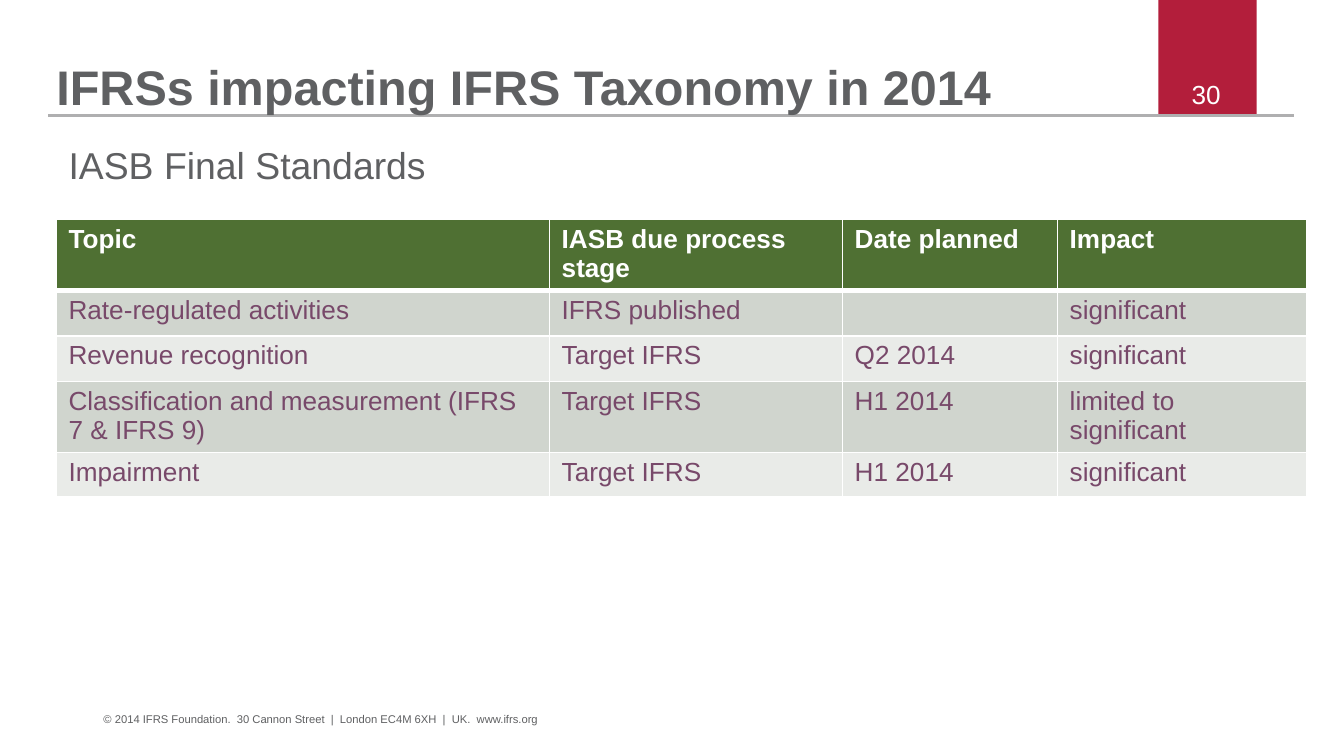
from dataclasses import dataclass
from typing import NamedTuple

from lxml.etree import SubElement
from pptx import Presentation
from pptx.dml.color import RGBColor
from pptx.enum.shapes import MSO_CONNECTOR, MSO_SHAPE
from pptx.enum.text import MSO_ANCHOR, PP_ALIGN
from pptx.oxml.ns import qn
from pptx.util import Emu, Inches, Pt


@dataclass(frozen=True)
class Theme:
    font: str = "Arial"
    grey: str = "5F6062"
    rule: str = "AFAFB0"
    red: str = "B31E3B"
    white: str = "FFFFFF"
    green: str = "4F7033"
    plum: str = "78496A"
    bands: tuple[str, str] = ("D0D5CE", "E9EBE8")
    title: float = 26
    subtitle: float = 20
    body: float = 14
    footer: float = 6


class Box(NamedTuple):
    """Left, top, width and height in percent of the slide's size."""
    x: float
    y: float
    w: float
    h: float


@dataclass(frozen=True)
class Label:
    text: str
    box: Box
    size: float
    color: str
    bold: bool = False
    align: PP_ALIGN = PP_ALIGN.LEFT
    anchor: MSO_ANCHOR = MSO_ANCHOR.TOP
    inset: tuple[float, float] = (0, 0)
    spacing: float = 1.0


T = Theme()
# Widescreen, 16:9
WIDTH = Inches(10)
HEIGHT = Emu(WIDTH * 9 // 16)
MARGIN, CONTENT = 4.2, 93
INSET = (0.09, 0.04)

LABELS = [
    Label("IFRSs impacting IFRS Taxonomy in 2014", Box(MARGIN, 3.73, 84, 11.56),
          T.title, T.grey, bold=True, anchor=MSO_ANCHOR.BOTTOM, spacing=0.9),
    Label("© 2014 IFRS Foundation.  30 Cannon Street  |  London EC4M 6XH  |  UK.  www.ifrs.org",
          Box(7.7, 94.22, 61.8, 2.84), T.footer, T.grey),
    Label("30", Box(86.3, 10.31, 6.9, 2.84), T.body, T.white, align=PP_ALIGN.CENTER),
    Label("IASB Final Standards", Box(MARGIN, 18.13, CONTENT, 7.47),
          T.subtitle, T.grey, inset=INSET),
]

COLUMNS = [36.7, 21.8, 16, 18.5]
ROWS = [9.42, 6.04, 6.04, 9.42, 5.87]
CELLS = [
    ["Topic", "IASB due process stage", "Date planned", "Impact"],
    ["Rate-regulated activities", "IFRS published", "", "significant"],
    ["Revenue recognition", "Target IFRS", "Q2 2014", "significant"],
    ["Classification and measurement (IFRS 7 & IFRS 9)", "Target IFRS", "H1 2014",
     "limited to significant"],
    ["Impairment", "Target IFRS", "H1 2014", "significant"],
]


def across(percent: float) -> Emu:
    return Emu(round(WIDTH * percent / 100))


def down(percent: float) -> Emu:
    return Emu(round(HEIGHT * percent / 100))


def place(box: Box) -> tuple[Emu, Emu, Emu, Emu]:
    return across(box.x), down(box.y), across(box.w), down(box.h)


def style_text(p, size: float, color: str, bold: bool) -> None:
    for r in p.runs:
        r.font.name, r.font.size, r.font.bold = T.font, Pt(size), bold
        r.font.color.rgb = RGBColor.from_string(color)


def set_insets(target, inset: tuple[float, float]) -> None:
    target.margin_left = target.margin_right = Inches(inset[0])
    target.margin_top = target.margin_bottom = Inches(inset[1])


def add_label(s, label: Label) -> None:
    tf = s.shapes.add_textbox(*place(label.box)).text_frame
    tf.word_wrap = True
    tf.vertical_anchor = label.anchor
    set_insets(tf, label.inset)
    p = tf.paragraphs[0]
    p.text, p.alignment, p.line_spacing = label.text, label.align, label.spacing
    style_text(p, label.size, label.color, label.bold)


def add_border(cell, side: str, points: float) -> None:
    ln = SubElement(cell._tc.get_or_add_tcPr(), qn(f"a:ln{side}"), w=str(Pt(points)))
    SubElement(SubElement(ln, qn("a:solidFill")), qn("a:srgbClr"), val=T.white)


def fill_cell(cell, text: str, row: int) -> None:
    header = row == 0
    set_insets(cell, INSET)
    p = cell.text_frame.paragraphs[0]
    if text:
        p.text = text
        style_text(p, T.body, T.white if header else T.plum, header)
    else:
        # An empty cell needs its own type size to keep the row low
        SubElement(p._p, qn("a:endParaRPr"), sz=str(round(T.body * 100)))
    # The line under the header is heavier than the others
    for side in "LRTB":
        heavy = (row, side) in ((0, "B"), (1, "T"))
        add_border(cell, side, 3 if heavy else 1)
    cell.fill.solid()
    color = T.green if header else T.bands[(row - 1) % 2]
    cell.fill.fore_color.rgb = RGBColor.from_string(color)


def add_standards_table(s) -> None:
    box = Box(MARGIN, 28.98, sum(COLUMNS), sum(ROWS))
    table = s.shapes.add_table(len(ROWS), len(COLUMNS), *place(box)).table
    for column, share in zip(table.columns, COLUMNS):
        column.width = across(share)
    for i, (row, share) in enumerate(zip(table.rows, ROWS)):
        row.height = down(share)
        for cell, text in zip(row.cells, CELLS[i]):
            fill_cell(cell, text, i)


def add_header(s) -> None:
    base = 15.29
    sp = s.shapes.add_shape(MSO_SHAPE.RECTANGLE, *place(Box(86.2, 0, 7.3, base)))
    sp.shadow.inherit = False
    sp.fill.solid()
    sp.fill.fore_color.rgb = RGBColor.from_string(T.red)
    sp.line.fill.background()
    rule = s.shapes.add_connector(MSO_CONNECTOR.STRAIGHT, across(3.6), down(base),
                                  across(96.3), down(base))
    rule.line.color.rgb = RGBColor.from_string(T.rule)
    rule.line.width = Pt(1.2)
    SubElement(rule._element.spPr, qn("a:effectLst"))


def main() -> None:
    prs = Presentation()
    prs.slide_width, prs.slide_height = WIDTH, HEIGHT
    s = prs.slides.add_slide(prs.slide_layouts[6])
    # Page tab and rule
    add_header(s)
    # Table of standards
    add_standards_table(s)
    # Title, footer, page number and subtitle
    for label in LABELS:
        add_label(s, label)
    prs.save("out.pptx")


if __name__ == "__main__":
    main()
